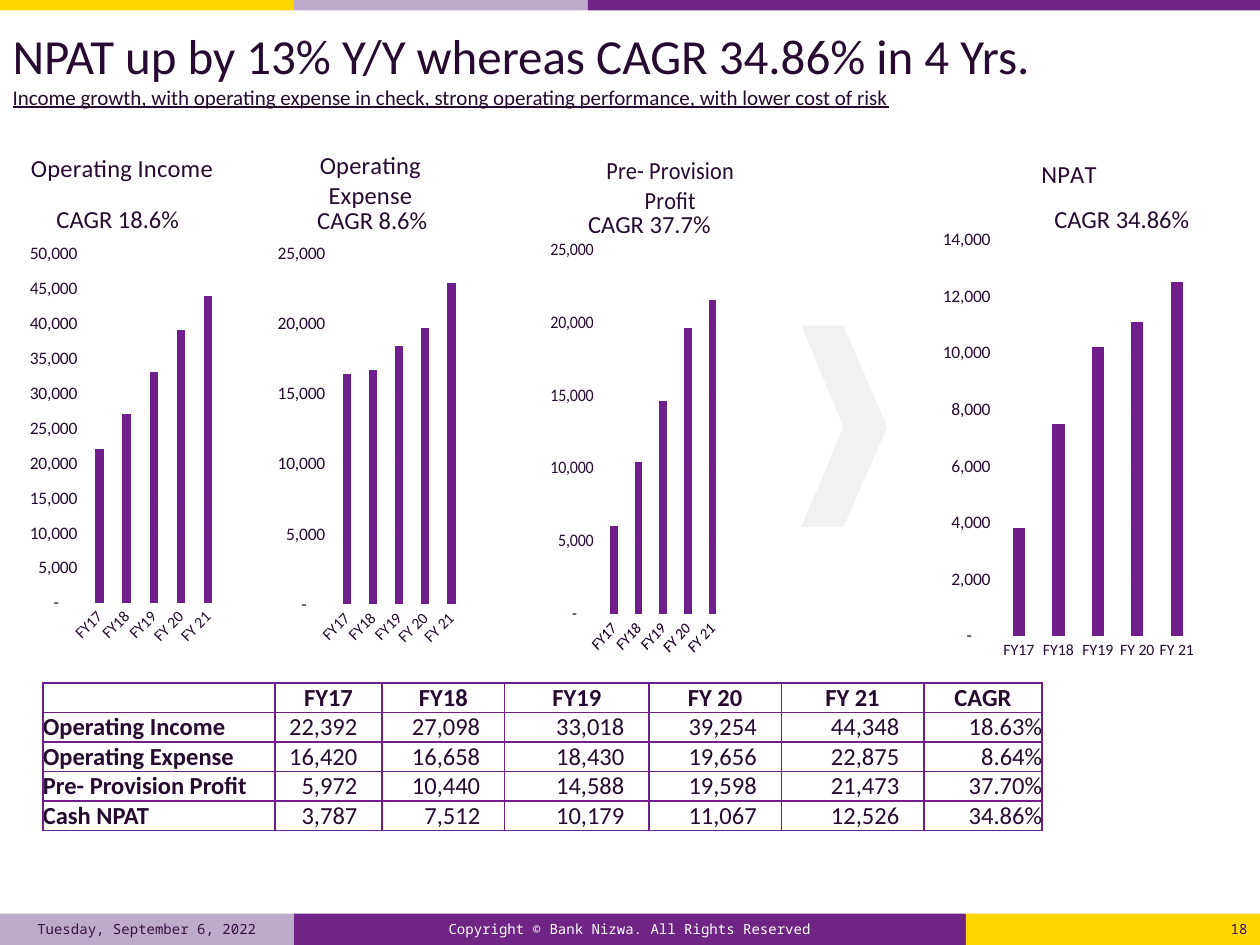
from dataclasses import dataclass
from itertools import pairwise

from lxml.etree import SubElement
from pptx import Presentation
from pptx.chart.data import CategoryChartData
from pptx.dml.color import RGBColor
from pptx.enum.chart import XL_CHART_TYPE as ChartType, XL_TICK_MARK as Tick
from pptx.enum.shapes import MSO_SHAPE as Shape
from pptx.enum.text import MSO_ANCHOR as Anchor, MSO_AUTO_SIZE as AutoSize, PP_ALIGN as Align
from pptx.oxml import parse_xml
from pptx.oxml.ns import nsdecls, qn
from pptx.util import Pt


@dataclass(frozen=True)
class Theme:
    ink: str = "260A30"
    footer_ink: str = "380F46"
    white: str = "FFFFFF"
    grid: str = "FFFFFE"
    purple: str = "6E2585"
    data: str = "6F1E8C"
    lilac: str = "BDABCC"
    yellow: str = "FFD600"
    pale: str = "F1F1F1"
    body: str = "Calibri"
    mono: str = "Noto Sans Mono"
    headline: int = 28
    label: int = 14
    subhead: int = 12
    scale: int = 10
    years: int = 9
    footer: int = 8


THEME = Theme()
YEARS = ["FY17", "FY18", "FY19", "FY 20", "FY 21"]
NUMBER_FORMAT = '_(* #,##0_);_(* \\(#,##0\\);_(* "-"??_);_(@_)'

# heading, box, plot (fractions), title corner, axis top, axis step, year angle, values
CHARTS = [
    ("Operating Income", (0.7, 73.4, 138.2, 313.9), (0.351, 0.228, 0.561, 0.636), None,
     50000, 5000, -45, [22000, 27000, 33000, 39000, 44000]),
    ("Operating Expense", (146.9, 72, 129.6, 311), (0.339, 0.234, 0.576, 0.645), None,
     25000, 5000, -45, [16400, 16700, 18400, 19700, 22900]),
    ("Pre- Provision Profit", (312.5, 75.6, 109.4, 309.6), (0.236, 0.216, 0.709, 0.673), (0.24, 0.03),
     25000, 5000, -45, [6000, 10400, 14600, 19600, 21500]),
    ("NPAT", (527, 77, 167.8, 309.6), (0.262, 0.194, 0.672, 0.731), None,
     14000, 2000, 0, [3800, 7500, 10200, 11100, 12500]),
]
GROWTH = [
    ("CAGR 18.6%", (25.2, 113, 105.8, 24.5)),
    ("CAGR 8.6%", (174.2, 113.8, 82.1, 24.5)),
    ("CAGR 37.7%", (329, 115.9, 85, 24.5)),
    ("CAGR 34.86%", (595.4, 113, 92.2, 24.5)),
]
RESULTS = [
    ["", *YEARS, "CAGR"],
    ["Operating Income", "22,392", "27,098", "33,018", "39,254", "44,348", "18.63%"],
    ["Operating Expense", "16,420", "16,658", "18,430", "19,656", "22,875", "8.64%"],
    ["Pre- Provision Profit", "5,972", "10,440", "14,588", "19,598", "21,473", "37.70%"],
    ["Cash NPAT", "3,787", "7,512", "10,179", "11,067", "12,526", "34.86%"],
]
RESULT_WIDTHS = [132.8, 61, 70.2, 82.4, 75.7, 81.4, 67.7]


def points(values):
    return [Pt(value) for value in values]


def apply(target, values):
    for name, value in values.items():
        setattr(target, name, value)


def set_font(font, size, color=THEME.ink, name=THEME.body, **extra):
    apply(font, {"size": Pt(size), "name": name, "bold": False, **extra})
    font.color.rgb = RGBColor.from_string(color)


def paint(shape, color):
    shape.shadow.inherit = False
    shape.fill.solid()
    shape.fill.fore_color.rgb = RGBColor.from_string(color)
    shape.line.fill.background()


def add_band(slide, box, color, text="", ink=THEME.footer_ink, align=Align.CENTER):
    band = slide.shapes.add_shape(Shape.RECTANGLE, *points(box))
    paint(band, color)
    if text:
        band.text_frame.vertical_anchor = Anchor.MIDDLE
        line = band.text_frame.paragraphs[0]
        apply(line, {"text": text, "alignment": align})
        set_font(line.runs[0].font, THEME.footer, ink, THEME.mono)


def add_headline(slide, headline, subhead):
    title = slide.shapes.title
    apply(title, dict(zip(("left", "top", "width", "height"), points((0, 10.8, 648, 55.4)))))
    frame = title.text_frame
    apply(frame, {"text": f"{headline}\n{subhead}", "word_wrap": True,
                  "auto_size": AutoSize.NONE, "vertical_anchor": Anchor.TOP})
    formats = [(THEME.headline, False), (THEME.subhead, True)]
    for line, (size, underline) in zip(frame.paragraphs, formats):
        line.alignment = Align.LEFT
        set_font(line.runs[0].font, size, underline=underline)


def add_growth(slide, text, box):
    frame = slide.shapes.add_textbox(*points(box)).text_frame
    apply(frame, {"word_wrap": True, "text": text})
    set_font(frame.paragraphs[0].runs[0].font, THEME.label)


def place(owner, corner, size=()):
    """Fix a chart part at fractions of the chart area."""
    layout = owner.find(qn("c:layout"))
    if layout is None:
        layout = parse_xml(f"<c:layout {nsdecls('c')}/>")
        owner.insert(0, layout)
    manual = SubElement(layout, qn("c:manualLayout"))
    settings = [("layoutTarget", "inner")] if size else []
    settings += [("xMode", "edge"), ("yMode", "edge")]
    settings += zip("xywh", (*corner, *size))
    for tag, value in settings:
        SubElement(manual, qn(f"c:{tag}")).set("val", str(value))


def add_columns(slide, heading, box, plot_box, title_corner, top, step, angle, values):
    data = CategoryChartData()
    data.categories = YEARS
    data.add_series(heading, values)
    chart = slide.shapes.add_chart(ChartType.COLUMN_CLUSTERED, *points(box), data).chart
    set_font(chart.font, THEME.scale)
    apply(chart, {"has_legend": False, "has_title": True})
    title = chart.chart_title
    title.text_frame.text = heading
    set_font(title.text_frame.paragraphs[0].runs[0].font, THEME.label)

    # Columns
    plot = chart.plots[0]
    apply(plot, {"gap_width": 219, "overlap": -27, "vary_by_categories": False})
    fill = plot.series[0].format.fill
    fill.solid()
    fill.fore_color.rgb = RGBColor.from_string(THEME.data)

    # Axes
    years, amounts = chart.category_axis, chart.value_axis
    apply(amounts, {"minimum_scale": 0, "maximum_scale": top, "major_unit": step,
                    "has_major_gridlines": True})
    for axis, size in ((years, THEME.years), (amounts, THEME.scale)):
        apply(axis, {"major_tick_mark": Tick.NONE, "minor_tick_mark": Tick.NONE})
        set_font(axis.tick_labels.font, size)
    apply(amounts.tick_labels, {"number_format": NUMBER_FORMAT, "number_format_is_linked": False})
    amounts.format.line.fill.background()
    for line in (years.format.line, amounts.major_gridlines.format.line):
        line.color.rgb = RGBColor.from_string(THEME.grid)
        line.width = Pt(0.75)
    body = years._element.find(qn("c:txPr")).find(qn("a:bodyPr"))
    body.set("rot", str(angle * 60000))
    body.set("vert", "horz")

    # Layout
    place(chart._chartSpace.chart.plotArea, plot_box[:2], plot_box[2:])
    if title_corner:
        place(title._element, title_corner)


def add_arrow(slide):
    left, notch, tip, top, middle, bottom = 458, 482.5, 507, 185.8, 243.5, 301.2
    builder = slide.shapes.build_freeform(notch, middle, scale=12700)
    builder.add_line_segments([(left, bottom), (notch, bottom), (tip, middle),
                               (notch, top), (left, top)], close=True)
    paint(builder.convert_to_shape(), THEME.pale)


def border(cell):
    properties = cell._tc.get_or_add_tcPr()
    for position, side in enumerate(("lnL", "lnR", "lnT", "lnB")):
        properties.insert(position, parse_xml(
            f'<a:{side} {nsdecls("a")} w="12700"><a:solidFill><a:srgbClr val="{THEME.data}"/>'
            f'</a:solidFill></a:{side}>'))


def add_results(slide):
    row_height = 16.9
    box = (24.5, 390.2, sum(RESULT_WIDTHS), row_height * len(RESULTS))
    table = slide.shapes.add_table(len(RESULTS), len(RESULT_WIDTHS), *points(box)).table
    apply(table, {"first_row": False, "horz_banding": False})
    for column, width in zip(table.columns, RESULT_WIDTHS):
        column.width = Pt(width)
    last = len(RESULT_WIDTHS) - 1
    for r, row in enumerate(RESULTS):
        table.rows[r].height = Pt(row_height)
        for c, text in enumerate(row):
            cell = table.cell(r, c)
            inset = Pt(14) if r and 0 < c < last else 0
            apply(cell, {"margin_left": 0, "margin_right": inset, "margin_top": 0,
                         "margin_bottom": 0, "vertical_anchor": Anchor.BOTTOM})
            cell.fill.background()
            border(cell)
            line = cell.text_frame.paragraphs[0]
            line.alignment = Align.CENTER if r == 0 else Align.RIGHT if c else Align.LEFT
            if text:
                line.text = text
                set_font(line.runs[0].font, THEME.label, bold=r == 0 or c == 0)
            else:
                SubElement(line._p, qn("a:endParaRPr")).set("sz", str(THEME.label * 100))


def main():
    deck = Presentation()
    apply(deck, {"slide_width": Pt(720), "slide_height": Pt(540)})
    slide = deck.slides.add_slide(deck.slide_layouts[5])

    # Top stripe
    stripe = (THEME.yellow, THEME.lilac, THEME.purple)
    for (left, right), color in zip(pairwise((0, 168, 336, 720)), stripe):
        add_band(slide, (left, 0, right - left, 6), color)

    # Headline
    add_headline(slide, "NPAT up by 13% Y/Y whereas CAGR 34.86% in 4 Yrs.",
                 "Income growth, with operating expense in check, strong operating performance, "
                 "with lower cost of risk")

    # Charts with their growth rates
    add_arrow(slide)
    for chart in CHARTS:
        add_columns(slide, *chart)
    for growth in GROWTH:
        add_growth(slide, *growth)

    # Results table
    add_results(slide)

    # Footer
    footer = [
        (THEME.lilac, "Tuesday, September 6, 2022"),
        (THEME.purple, "Copyright © Bank Nizwa. All Rights Reserved", THEME.white),
        (THEME.yellow, "18", THEME.footer_ink, Align.RIGHT),
    ]
    for (left, right), part in zip(pairwise((0, 168, 552, 720)), footer):
        add_band(slide, (left, 522, right - left, 18), *part)

    deck.save("out.pptx")


if __name__ == "__main__":
    main()
